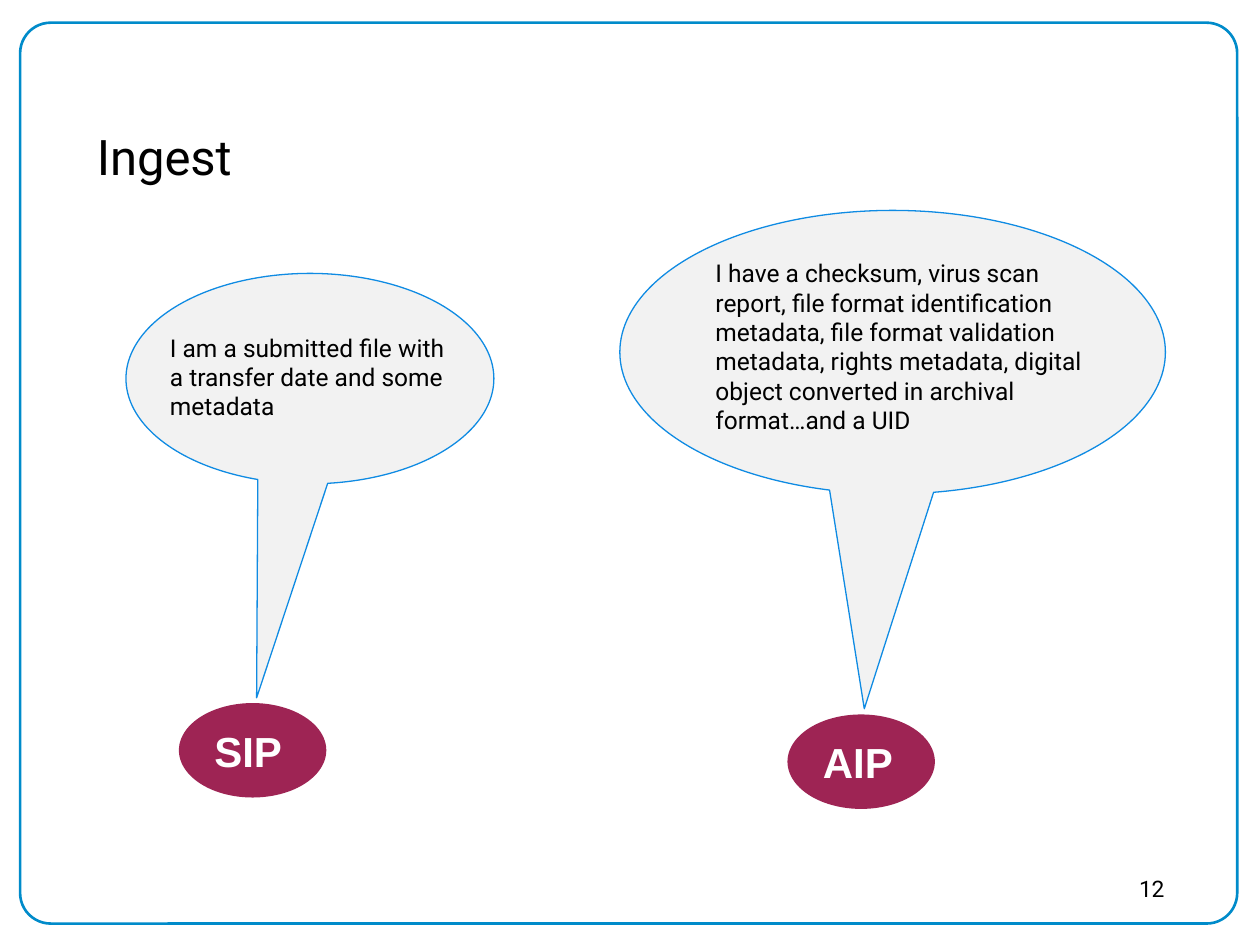
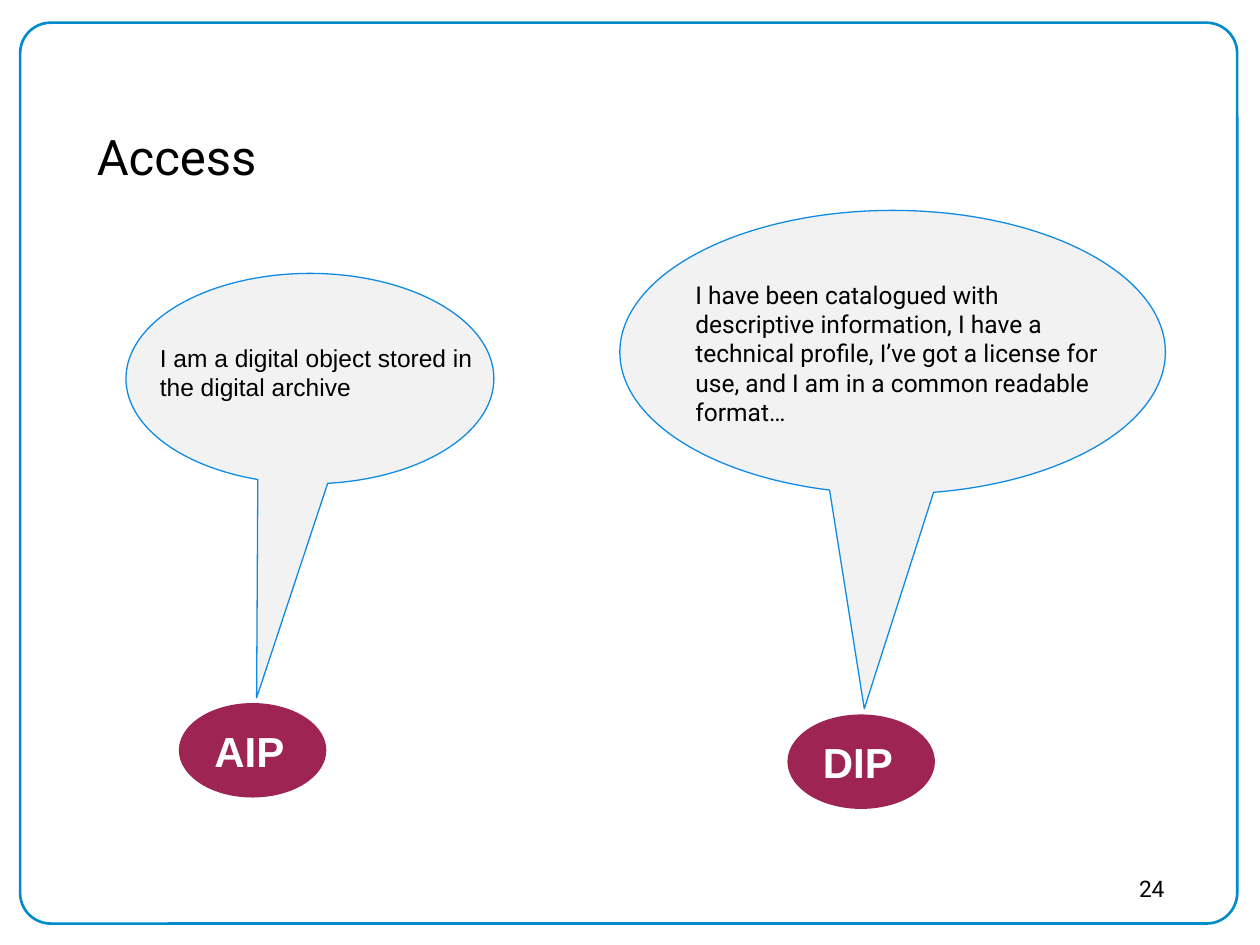
"""Build two slides on which archive packages speak in callouts."""
from dataclasses import dataclass
from typing import NamedTuple

from pptx import Presentation as Deck
from pptx.dml.color import RGBColor as Rgb
from pptx.enum.shapes import MSO_SHAPE as Kind
from pptx.enum.text import MSO_ANCHOR as Anchor, PP_ALIGN as Align
from pptx.shapes.autoshape import Shape
from pptx.slide import Slide
from pptx.util import Emu, Pt

SCALE = 9144


class Box(NamedTuple):
    """Left, top, width and height in px, at 100 px to the inch."""
    left: int
    top: int
    width: int
    height: int


class Style(NamedTuple):
    """Font face, size, colour and weight of a text."""
    face: str
    size: int
    color: str = "000000"
    bold: bool = False


@dataclass(frozen=True)
class Theme:
    """Colours and type styles that the slides share."""
    frame: str = "008BCA"
    badge: str = "9E2454"
    bubble: str = "F2F2F2"
    edge: str = "0F8BE3"
    title: Style = Style("Roboto", 28)
    number: Style = Style("Roboto", 13)
    label: Style = Style("Arial", 24, "FFFFFF", True)
    speech: Style = Style("Roboto", 14)
    plain: Style = Style("Arial", 14)


class Spot(NamedTuple):
    """Fixed places of one speaker: its badge, bubble and bubble tail."""
    badge: Box
    bubble: Box
    tail: tuple[float, float]


class Voice(NamedTuple):
    """What one speaker is called and says."""
    label: str
    words: str
    box: Box
    style: Style


class Page(NamedTuple):
    """Contents of one slide."""
    title: str
    number: str
    voices: tuple[Voice, Voice]


THEME = Theme()
FRAME = Box(16, 18, 966, 715)
TITLE = Box(67, 90, 867, 68)
NUMBER = Box(842, 689, 92, 31)
SPOTS = (
    Spot(Box(142, 558, 117, 75), Box(100, 217, 292, 167), (-0.145, 1.517)),
    Spot(Box(625, 567, 117, 75), Box(492, 167, 433, 225), (-0.052, 1.258)),
)
PAGES = (
    Page("Ingest", "12", (
        Voice("SIP", "I am a submitted file with a transfer date and some metadata",
              Box(125, 259, 242, 81), THEME.speech),
        Voice("AIP", "I have a checksum, virus scan report, file format identification "
              "metadata, file format validation metadata, rights metadata, digital "
              "object converted in archival format…and a UID",
              Box(558, 200, 333, 151), THEME.speech),
    )),
    Page("Access", "24", (
        Voice("AIP", "I am a digital object stored in the digital archive",
              Box(117, 267, 275, 57), THEME.plain),
        Voice("DIP", "I have been catalogued with descriptive information, I have a "
              "technical profile, I’ve got a license for use, and I am in a common "
              "readable format…",
              Box(542, 217, 358, 128), THEME.speech),
    )),
)


def px(size: int) -> Emu:
    """Turn px into EMU."""
    return Emu(size * SCALE)


def place(box: Box) -> tuple[Emu, ...]:
    """Turn a box into EMU lengths."""
    return tuple(px(side) for side in box)


def write(shape: Shape, text: str, style: Style, anchor: Anchor = Anchor.TOP,
          align: Align = Align.LEFT) -> None:
    """Put one styled paragraph into a shape."""
    frame = shape.text_frame
    frame.word_wrap = True
    frame.vertical_anchor = anchor
    line = frame.paragraphs[0]
    line.text = text
    line.alignment = align
    font = line.font
    font.name, font.size, font.bold = style.face, Pt(style.size), style.bold
    font.color.rgb = Rgb.from_string(style.color)


def draw(slide: Slide, kind: Kind, box: Box, fill: str = "", edge: str = "",
         weight: float = 0.75, bends: tuple[float, ...] = ()) -> Shape:
    """Add a flat preset shape; an empty colour means none."""
    shape = slide.shapes.add_shape(kind, *place(box))
    shape.shadow.inherit = False
    for paint, color in ((shape.fill, fill), (shape.line.fill, edge)):
        if color:
            paint.solid()
            paint.fore_color.rgb = Rgb.from_string(color)
        else:
            paint.background()
    if edge:
        shape.line.width = Pt(weight)
    for index, bend in enumerate(bends):
        shape.adjustments[index] = bend
    return shape


def add_text(slide: Slide, box: Box, text: str, style: Style,
             anchor: Anchor = Anchor.TOP, align: Align = Align.LEFT) -> None:
    """Add a text box."""
    write(slide.shapes.add_textbox(*place(box)), text, style, anchor, align)


def add_badge(slide: Slide, box: Box, label: str) -> None:
    """Add the named oval of a speaker."""
    badge = draw(slide, Kind.OVAL, box, THEME.badge)
    frame = badge.text_frame
    frame.margin_left = frame.margin_right = px(11)
    frame.margin_top = frame.margin_bottom = px(6)
    write(badge, label, THEME.label, Anchor.MIDDLE)


def add_page(deck: Deck, page: Page) -> None:
    """Add one slide with its frame, title, number and speakers."""
    slide = deck.slides.add_slide(deck.slide_layouts[6])
    draw(slide, Kind.ROUNDED_RECTANGLE, FRAME, edge=THEME.frame, weight=1.5, bends=(0.034,))
    add_text(slide, TITLE, page.title, THEME.title, Anchor.MIDDLE)
    add_text(slide, NUMBER, page.number, THEME.number, align=Align.RIGHT)
    for spot, voice in zip(SPOTS, page.voices):
        add_badge(slide, spot.badge, voice.label)
        draw(slide, Kind.OVAL_CALLOUT, spot.bubble, THEME.bubble, THEME.edge, bends=spot.tail)
        add_text(slide, voice.box, voice.words, voice.style)


def main() -> None:
    """Build and save the deck."""
    deck = Deck()
    deck.slide_width, deck.slide_height = px(1000), px(750)
    for page in PAGES:
        add_page(deck, page)
    deck.save("out.pptx")


if __name__ == "__main__":
    main()
